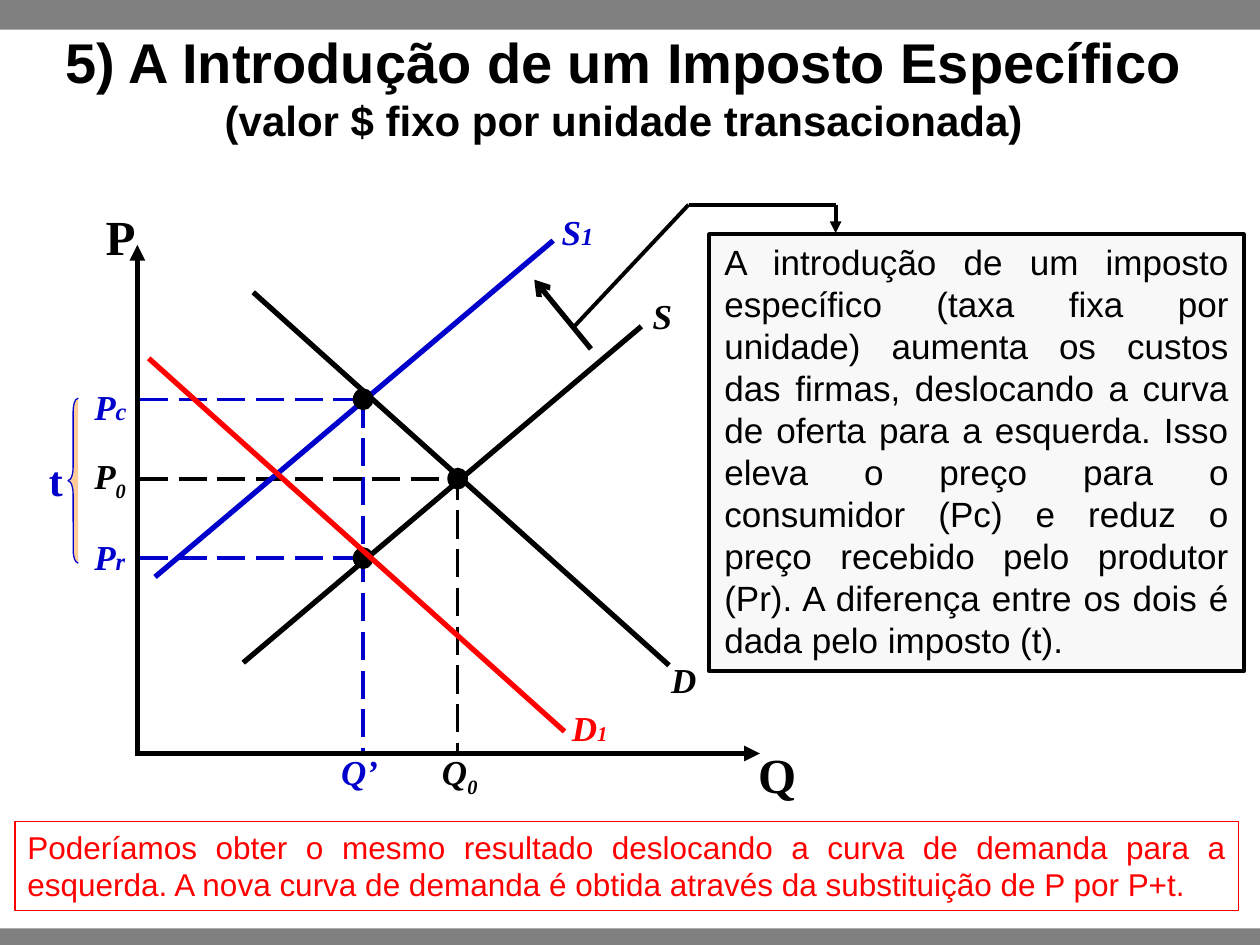
from lxml import etree
from pptx import Presentation
from pptx import util as u
from pptx.dml import color
from pptx.enum import dml, shapes, text
from pptx.oxml import ns

Pt = u.Pt
C = {"ink": "000000", "blue": "0000CC", "red": "FF0000", "bar": "808080",
     "panel": "F8F8F8", "brace": "FFCC99"}
SANS, SERIF = "Arial", "Times New Roman"


def rgb(name):
    """Return the palette colour of that name."""
    return color.RGBColor.from_string(C[name])


def add_run(p, words, size, ink="ink", face=SANS, bold=False, italic=False, base=None):
    """Append one formatted run to a paragraph."""
    r = p.add_run()
    r.text = words
    f = r.font
    f.size, f.name, f.bold, f.italic = Pt(size), face, bold, italic
    f.color.rgb = rgb(ink)
    if base:
        r._r.get_or_add_rPr().set("baseline", str(base))


def add_shape(s, kind, x, y, w, h, fill=None, line=None, weight=1):
    """Add a preset shape without a shadow."""
    sp = s.shapes.add_shape(kind, Pt(x), Pt(y), Pt(w), Pt(h))
    sp.shadow.inherit = False
    if fill:
        sp.fill.solid()
        sp.fill.fore_color.rgb = rgb(fill)
    else:
        sp.fill.background()
    if line:
        sp.line.color.rgb = rgb(line)
        sp.line.width = Pt(weight)
    else:
        sp.line.fill.background()
    return sp


def add_line(s, box, start, end, ink="ink", weight=3, dash=False, arrow=None):
    """Add a straight line between two points given relative to the box."""
    x, y = box[:2]
    ln = s.shapes.add_connector(
        shapes.MSO_CONNECTOR.STRAIGHT, Pt(x + start[0]), Pt(y + start[1]),
        Pt(x + end[0]), Pt(y + end[1]))
    ln.line.color.rgb = rgb(ink)
    ln.line.width = Pt(weight)
    if dash:
        ln.line.dash_style = dml.MSO_LINE.LONG_DASH
    if arrow:
        etree.SubElement(ln.line._get_or_add_ln(), ns.qn("a:tailEnd"), type=arrow)
    etree.SubElement(ln._element.spPr, ns.qn("a:effectLst"))


def add_label(s, box, x, y, w, main, sub="", ink="ink", size=20, sub_size=20,
              base=None, italic=True):
    """Add a bold serif label with an optional smaller or lowered index."""
    tb = s.shapes.add_textbox(Pt(box[0] + x), Pt(box[1] + y), Pt(w), Pt(size * 1.2 + 7))
    tf = tb.text_frame
    tf.word_wrap = False
    p = tf.paragraphs[0]
    add_run(p, main, size, ink, SERIF, True, italic)
    if sub:
        add_run(p, sub, sub_size, ink, SERIF, True, italic, base)


def shift(curve, dx, dy):
    """Move both ends of a curve by the same amount."""
    return [(x + dx, y + dy) for x, y in curve]


def add_bars(s, box):
    """Place the grey bands along the top and bottom edges of the box."""
    x, y, w, h = box
    rect = shapes.MSO_SHAPE.RECTANGLE
    add_shape(s, rect, x, y, w, 17, "bar")
    add_shape(s, rect, x, y + h - 9.4, w, 9.4, "bar")


def add_title(s, box):
    """Fill the title placeholder with the heading and its smaller second line."""
    t = s.shapes.title
    t.left, t.top, t.width, t.height = map(Pt, box)
    tf = t.text_frame
    tf.word_wrap = True
    tf.auto_size = text.MSO_AUTO_SIZE.NONE
    tf.vertical_anchor = text.MSO_ANCHOR.MIDDLE
    p = tf.paragraphs[0]
    p.alignment = text.PP_ALIGN.CENTER
    add_run(p, "5) A Introdução de um Imposto Específico ", 32, bold=True)
    add_run(p, "(valor $ fixo por unidade transacionada)", 24, bold=True)


def add_note(s, box, words, size, ink, line, weight, fill=None, inset=7.2):
    """Place a framed, justified paragraph in the box."""
    sp = add_shape(s, shapes.MSO_SHAPE.RECTANGLE, *box, fill, line, weight)
    tf = sp.text_frame
    tf.word_wrap = True
    tf.margin_left = tf.margin_right = Pt(inset)
    tf.vertical_anchor = text.MSO_ANCHOR.TOP
    p = tf.paragraphs[0]
    p.alignment = text.PP_ALIGN.JUSTIFY
    add_run(p, words, size, ink)


def add_diagram(s, box):
    """Draw the supply and demand diagram from the top of its price axis."""
    x, y, w, h = box
    q_tax, q_0 = 129, 183
    p_c, p_0, p_r = (88.2 + 45.4 * i for i in range(3))
    supply = [(60.5, 238.7), (288, 46.5)]
    demand = [(66.2, 27), (303.8, 240.2)]

    add_line(s, box, (q_tax, p_c), (q_tax, h + 1.4), "blue", 2, True)
    add_line(s, box, (q_0, p_0 - 4), (q_0, h + 1.4), "ink", 2, True)
    for price, q, ink in ((p_c, q_tax, "blue"), (p_0, q_0, "ink"), (p_r, q_tax, "blue")):
        add_line(s, box, (1.4, price), (q - 6, price), ink, 2, True)

    add_line(s, box, *shift(supply, -50.4, -49), "blue")
    add_line(s, box, *supply)
    add_line(s, box, *demand)
    add_line(s, box, (0, h + 1.4), (0, 0), arrow="triangle")
    add_line(s, box, (1.4, h), (w, h), arrow="triangle")

    add_line(s, box, (259.2, 59.4), (226.8, 19.8), arrow="arrow")
    callout = [(248.4, 47.9), (315, -23), (399, -23), (399, -6.8)]
    for start, end, arrow in zip(callout, callout[1:], (None, None, "triangle")):
        add_line(s, box, start, end, weight=2.25, arrow=arrow)

    for q, price in ((q_tax, p_c), (q_0, p_0), (q_tax, p_r)):
        add_shape(s, shapes.MSO_SHAPE.OVAL, x + q - 5.4, y + price - 5.8,
                  10.8, 11.5, "ink", "ink")
    brace = add_shape(s, shapes.MSO_SHAPE.LEFT_BRACE, x - 39.6, y + p_c - 0.7,
                      5.8, 94.3, "brace", "blue", 0.75)
    brace.adjustments[0] = 1.31
    add_line(s, box, *shift(demand, -59.7, 37.8), "red")

    add_label(s, box, -25.2, -25.5, 31.7, "P", size=28, italic=False)
    add_label(s, box, 347.7, 282, 36, "Q", size=28, italic=False)
    add_label(s, box, -57.6, 116.3, 22.3, "t", ink="blue", size=24, italic=False)
    add_label(s, box, -31.7, 76.7, 33, "P", "c", "blue", sub_size=14)
    add_label(s, box, -31.7, 116.3, 33, "P", "0", base=-25000)
    add_label(s, box, -31.7, 162.4, 33, "P", "r", "blue", sub_size=14)
    add_label(s, box, 109.4, 285.5, 36, "Q’", ink="blue")
    add_label(s, box, 167, 285.5, 36, "Q", "0", base=-25000)
    add_label(s, box, 235.4, -23.4, 32.4, "S", "1", "blue", sub_size=14)
    add_label(s, box, 287.3, 24.9, 26, "S")
    add_label(s, box, 298, 233, 28.8, "D")
    add_label(s, box, 241.2, 260.3, 35.3, "D", "1", "red", sub_size=12)


def main():
    """Build and save the slide."""
    prs = Presentation()
    prs.slide_width, prs.slide_height = Pt(720), Pt(540)
    s = prs.slides.add_slide(prs.slide_layouts[5])
    add_bars(s, (0, 0, 720, 540))
    add_title(s, (23.8, 7.2, 665.3, 84.2))
    add_note(s, (405.4, 133.9, 305.3, 249.8),
             "A introdução de um imposto específico (taxa fixa por unidade) aumenta os "
             "custos das firmas, deslocando a curva de oferta para a esquerda. Isso eleva "
             "o preço para o consumidor (Pc) e reduz o preço recebido pelo produtor (Pr). "
             "A diferença entre os dois é dada pelo imposto (t).",
             20, "ink", "ink", 2.25, "panel", 8.5)
    add_diagram(s, (78.5, 140, 355.7, 290.6))
    add_note(s, (8.6, 469.4, 699.1, 51.1),
             "Poderíamos obter o mesmo resultado deslocando a curva de demanda para a "
             "esquerda. A nova curva de demanda é obtida através da substituição de P "
             "por P+t.", 18, "red", "red", 0.75)
    prs.save("out.pptx")


if __name__ == "__main__":
    main()
